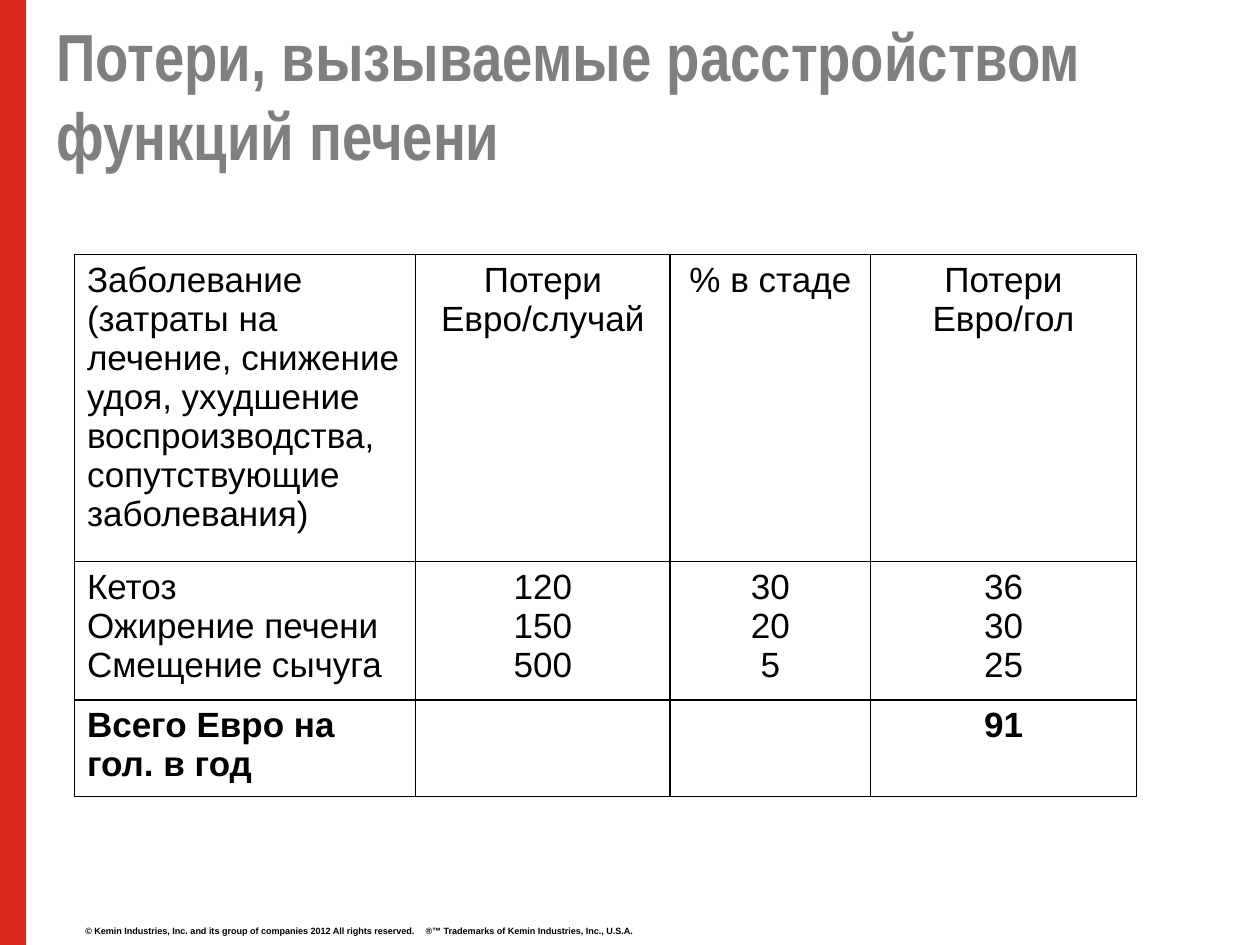
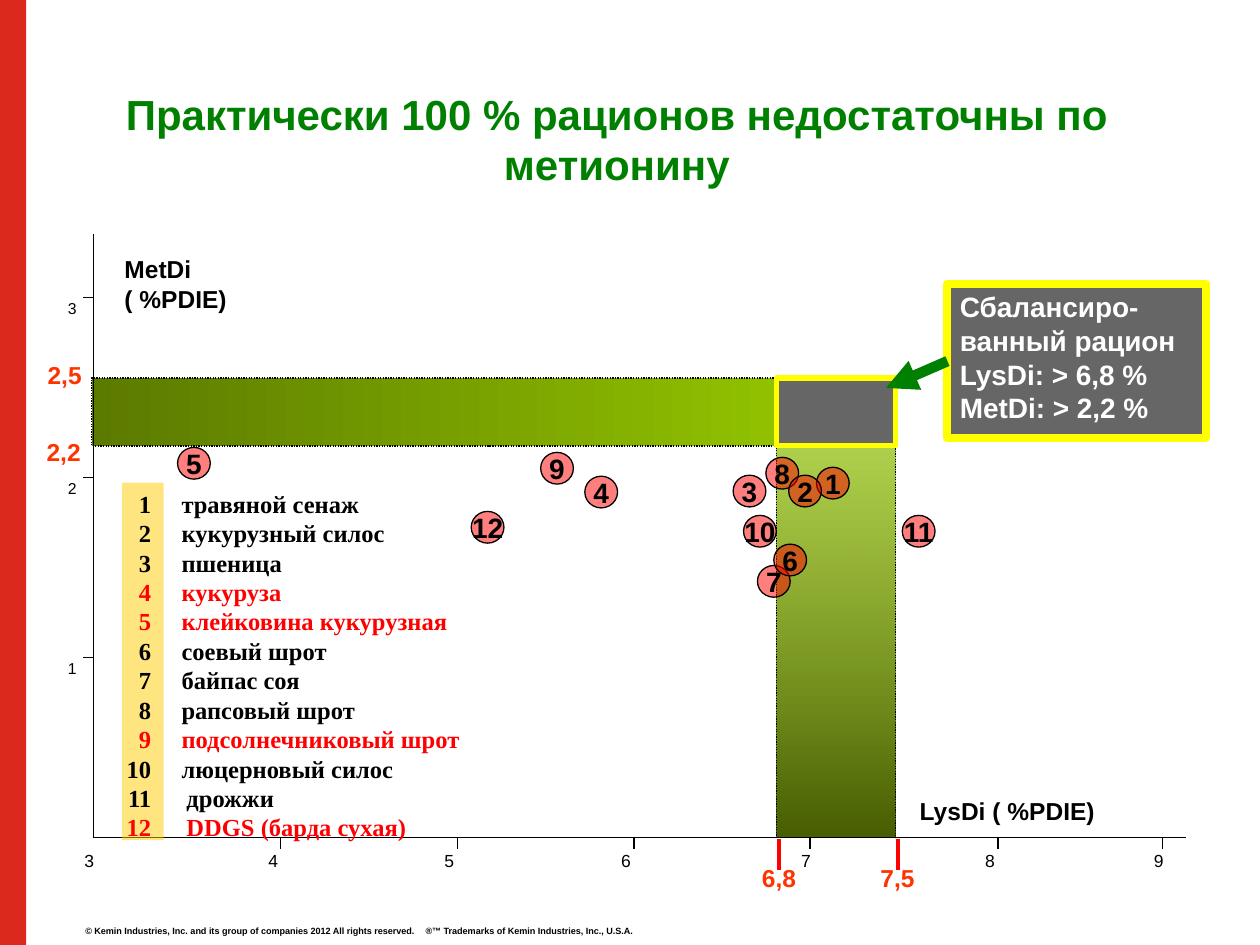
from lxml.etree import SubElement
from pptx import Presentation
from pptx.dml.color import RGBColor
from pptx.enum.dml import MSO_LINE
from pptx.enum.shapes import MSO_CONNECTOR, MSO_SHAPE
from pptx.enum.text import MSO_ANCHOR, PP_ALIGN
from pptx.oxml.ns import qn
from pptx.util import Cm, Pt

BLACK, WHITE, RED, YELLOW = "000000", "FFFFFF", "FF0000", "FFFF00"
BRAND_RED, GRAY, DARK_GRAY = "DC291E", "7F7F7F", "666666"
GREEN, LIME, ORANGE, AMBER = "008000", "99CC00", "FF3300", "FFCC00"
FOOTER = ("© Kemin Industries, Inc. and its group of companies 2012 All rights reserved."
          "\t®™ Trademarks of Kemin Industries, Inc., U.S.A.")

DISEASE_ROWS = [
    [["Заболевание (затраты на лечение, снижение удоя, ухудшение "
      "воспроизводства, сопутствующие заболевания)"],
     ["Потери Евро/случай"], ["% в стаде"], ["Потери Евро/гол"]],
    [["Кетоз", "Ожирение печени", "Смещение сычуга"],
     ["120", "150", "500"], ["30", "20", "5"], ["36", "30", "25"]],
    [["Всего Евро на гол. в год"], [], [], ["91"]],
]

FEEDS = ["травяной сенаж", "кукурузный силос", "пшеница", "кукуруза",
         "клейковина кукурузная", "соевый шрот", "байпас соя", "рапсовый шрот",
         "подсолнечниковый шрот", "люцерновый силос", "дрожжи", "DDGS (барда сухая)"]
RED_FEEDS = {4, 5, 9, 12}

FEED_POINTS = {
    4: (11.79, 9.6), 9: (10.9, 9.12), 7: (15.27, 11.4), 11: (18.19, 10.39),
    1: (16.46, 9.42), 8: (15.44, 9.22), 2: (15.9, 9.58), 3: (14.78, 9.58),
    10: (14.99, 10.39), 6: (15.6, 10.97), 5: (3.58, 9.02), 12: (9.5, 10.31),
}

ORIGIN_X, ORIGIN_Y, Y_STEP = 1.88, 16.89, 3.63
X_TICKS = {4: 5.66, 5: 9.22, 6: 12.78, 7: 16.33, 8: 20.12, 9: 23.44}
X_LABELS = {3: 1.45, 4: 5.16, 5: 8.71, 6: 12.27, 7: 15.9, 8: 19.61, 9: 23.01}
BAND_TOP, BAND_HEIGHT, ZONE_LEFT, ZONE_WIDTH = 7.62, 1.37, 15.65, 2.41


def rgb(color):
    """Turn a hex string into a colour."""
    return RGBColor.from_string(color)


def set_alpha(parent, percent):
    """Make the first plain colour under an element partly transparent."""
    color = next(parent.iter(qn("a:srgbClr")))
    SubElement(color, qn("a:alpha"), val=str(percent * 1000))


class Deck:
    """Hold the shared style and the current slide."""

    def __init__(self):
        """Start a presentation of the right size."""
        self.presentation = Presentation()
        self.presentation.slide_width = Cm(25.4)
        self.presentation.slide_height = Cm(19.05)
        self.slide = None

    def add_slide(self):
        """Add a slide with the red side band and the footer."""
        self.slide = self.presentation.slides.add_slide(self.presentation.slide_layouts[6])
        self.shape(0, 0, 0.53, 19.05, fill=BRAND_RED)
        footer = self.text(1.47, 18.49, 15.24, 0.51, [])
        run = self.paragraph(footer.text_frame, FOOTER, 9, bold=True, tabs=[("l", 6.86)])
        run.font._element.set("baseline", "30000")

    def paragraph(self, frame, text, size, color=BLACK, bold=False, font="Arial",
                  align=PP_ALIGN.LEFT, tabs=()):
        """Write one paragraph, using the empty first one when there is one."""
        paragraph = frame.paragraphs[0]
        if paragraph.runs:
            paragraph = frame.add_paragraph()
        paragraph.alignment = align
        if tabs:
            tab_list = SubElement(paragraph._p.get_or_add_pPr(), qn("a:tabLst"))
            for side, position in tabs:
                SubElement(tab_list, qn("a:tab"), pos=str(Cm(position)), algn=side)
        run = paragraph.add_run()
        run.text = text
        run.font.size, run.font.bold, run.font.name = Pt(size), bold, font
        run.font.color.rgb = rgb(color)
        return run

    def text(self, left, top, width, height, lines, size=14, wrap=True,
             anchor=MSO_ANCHOR.TOP, **style):
        """Add a text box."""
        box = self.slide.shapes.add_textbox(Cm(left), Cm(top), Cm(width), Cm(height))
        box.text_frame.word_wrap = wrap
        box.text_frame.vertical_anchor = anchor
        for line in lines:
            self.paragraph(box.text_frame, line, size, **style)
        return box

    def shape(self, left, top, width, height, kind=MSO_SHAPE.RECTANGLE, fill=None,
              alpha=None, line=None, weight=0.75):
        """Add a preset shape with a plain fill."""
        shape = self.slide.shapes.add_shape(kind, Cm(left), Cm(top), Cm(width), Cm(height))
        shape.shadow.inherit = False
        if fill:
            shape.fill.solid()
            shape.fill.fore_color.rgb = rgb(fill)
        if alpha:
            set_alpha(shape._element.spPr, alpha)
        if line:
            shape.line.color.rgb = rgb(line)
            shape.line.width = Pt(weight)
        else:
            shape.line.fill.background()
        return shape

    def gradient_band(self, left, top, width, height, colors, angle, alpha=None):
        """Add a dotted rectangle with a two-colour gradient."""
        band = self.shape(left, top, width, height, line=BLACK)
        band.line.dash_style = MSO_LINE.ROUND_DOT
        band.fill.gradient()
        band.fill.gradient_angle = angle
        for stop, position, color in zip(band.fill.gradient_stops, (0, 1), colors):
            stop.position = position
            stop.color.rgb = rgb(color)
        if alpha:
            set_alpha(band._element.spPr, alpha)

    def point(self, number, left, top):
        """Add a numbered, half-transparent circle."""
        circle = self.shape(left, top, 0.66, 0.64, MSO_SHAPE.OVAL, RED, 50, BLACK)
        frame = circle.text_frame
        frame.word_wrap = False
        frame.vertical_anchor = MSO_ANCHOR.MIDDLE
        self.paragraph(frame, str(number), 16, bold=True, align=PP_ALIGN.CENTER)

    def line(self, start_x, start_y, end_x, end_y, color=BLACK, weight=0.75, arrow=False):
        """Add a straight line, with an arrowhead at its end if asked."""
        line = self.slide.shapes.add_connector(
            MSO_CONNECTOR.STRAIGHT, Cm(start_x), Cm(start_y), Cm(end_x), Cm(end_y))
        line.line.color.rgb = rgb(color)
        line.line.width = Pt(weight)
        if arrow:
            SubElement(line.line._get_or_add_ln(), qn("a:tailEnd"), type="triangle")
        SubElement(line._element.spPr, qn("a:effectLst"))
        return line

    def cell_border(self, cell):
        """Draw thin black lines round a table cell."""
        properties = cell._tc.get_or_add_tcPr()
        for index, side in enumerate(("a:lnL", "a:lnR", "a:lnT", "a:lnB")):
            border = properties.makeelement(qn(side), {"w": str(Pt(1))})
            fill = SubElement(border, qn("a:solidFill"))
            SubElement(fill, qn("a:srgbClr"), val=BLACK)
            properties.insert(index, border)

    def table(self, left, top, widths, heights, rows):
        """Add a ruled table whose last row is bold."""
        frame = self.slide.shapes.add_table(len(heights), len(widths), Cm(left), Cm(top),
                                            Cm(sum(widths)), Cm(sum(heights)))
        table = frame.table
        for column, width in zip(table.columns, widths):
            column.width = Cm(width)
        for row, height, contents in zip(table.rows, heights, rows):
            row.height = Cm(height)
            for index, (cell, lines) in enumerate(zip(row.cells, contents)):
                cell.fill.background()
                self.cell_border(cell)
                for line in lines:
                    self.paragraph(cell.text_frame, line, 20, bold=contents is rows[-1],
                                   align=PP_ALIGN.CENTER if index else PP_ALIGN.LEFT)


def build_losses(deck):
    """Build the slide with the table of losses."""
    deck.add_slide()
    deck.text(0.89, 1.12, 21.59, 1.57, ["Потери, вызываемые расстройством функций печени"],
              38, color=GRAY, bold=True, font="Arial Narrow", anchor=MSO_ANCHOR.MIDDLE)
    deck.table(1.5, 5.13, [6.88, 5.13, 4.04, 5.36], [5.87, 2.67, 1.85], DISEASE_ROWS)


def build_axes(deck):
    """Draw both axes with their ticks, numbers and names."""
    deck.line(ORIGIN_X, ORIGIN_Y, 23.9, ORIGIN_Y)
    deck.line(ORIGIN_X, ORIGIN_Y, ORIGIN_X, 4.72)
    for value in (1, 2, 3):
        y = ORIGIN_Y - value * Y_STEP
        deck.line(ORIGIN_X - 0.2, y, ORIGIN_X, y)
        deck.text(1.12, y - 0.1, 0.69, 0.64, [str(value)], 9, wrap=False)
    for x in X_TICKS.values():
        deck.line(x, ORIGIN_Y, x, ORIGIN_Y + 0.23)
    for value, left in X_LABELS.items():
        deck.text(left, 17.02, 0.71, 0.69, [str(value)], 10, wrap=False)
    deck.text(18.29, 15.93, 4.04, 0.84, ["LysDi ( %PDIE)"], wrap=False, bold=True)
    deck.text(2.26, 5, 4.04, 0.84, ["MetDi", "( %PDIE)"], bold=True)


def build_legend(deck):
    """List the numbered feeds beside an amber strip."""
    deck.shape(2.46, 9.73, 0.84, 7.21, fill=AMBER, alpha=50)
    legend = deck.text(2.29, 9.73, 8.76, 7.34, [])
    for number, feed in enumerate(FEEDS, 1):
        name_tab = 1.22 if number > 10 else 1.12
        deck.paragraph(legend.text_frame, f"\t{number}\t{feed}", 14,
                       RED if number in RED_FEEDS else BLACK, True, "Times New Roman",
                       tabs=[("r", 0.51), ("l", name_tab)])


def build_rations(deck):
    """Build the slide with the chart of rations."""
    deck.add_slide()
    deck.text(1.83, 1.65, 21.21, 2.31, ["Практически 100 % рационов недостаточны по метионину"],
              24, color=GREEN, bold=True, align=PP_ALIGN.CENTER)
    deck.gradient_band(ZONE_LEFT, BAND_TOP, ZONE_WIDTH, ORIGIN_Y - BAND_TOP,
                       (LIME, "475E00"), 270, 65)
    deck.gradient_band(1.85, BAND_TOP, 16, BAND_HEIGHT, ("5B7A00", LIME), 0)
    build_axes(deck)
    deck.shape(ZONE_LEFT, BAND_TOP, ZONE_WIDTH, BAND_HEIGHT, fill=DARK_GRAY,
               line=YELLOW, weight=3)
    build_legend(deck)
    for number, (left, top) in FEED_POINTS.items():
        deck.point(number, left, top)
    for limit, left, top in (("6,8", 15.11, 17.27), ("7,5", 17.5, 17.27),
                             ("2,2", 0.69, 8.69), ("2,5", 0.71, 7.14)):
        deck.text(left, top, 1.19, 0.84, [limit], wrap=False, color=ORANGE, bold=True)
    for x in (15.7, 18.11):
        deck.line(x, 16.92, x, 17.53, RED, 2.25)
    callout = deck.shape(19.1, 5.72, 5.21, 3.12, fill=DARK_GRAY, line=YELLOW, weight=4.5)
    callout.text_frame.word_wrap = True
    callout.text_frame.vertical_anchor = MSO_ANCHOR.TOP
    for line in ("Сбалансиро-ванный рацион", "LysDi: > 6,8 %", "MetDi: > 2,2 %"):
        deck.paragraph(callout.text_frame, line, 16, WHITE, True)
    arrow = deck.line(19.1, 7.28, 17.86, 7.82, GREEN, 6, arrow=True)
    arrow.begin_connect(callout, 1)


def main():
    """Build and save the presentation."""
    deck = Deck()
    build_losses(deck)
    build_rations(deck)
    deck.presentation.save("out.pptx")


if __name__ == "__main__":
    main()
